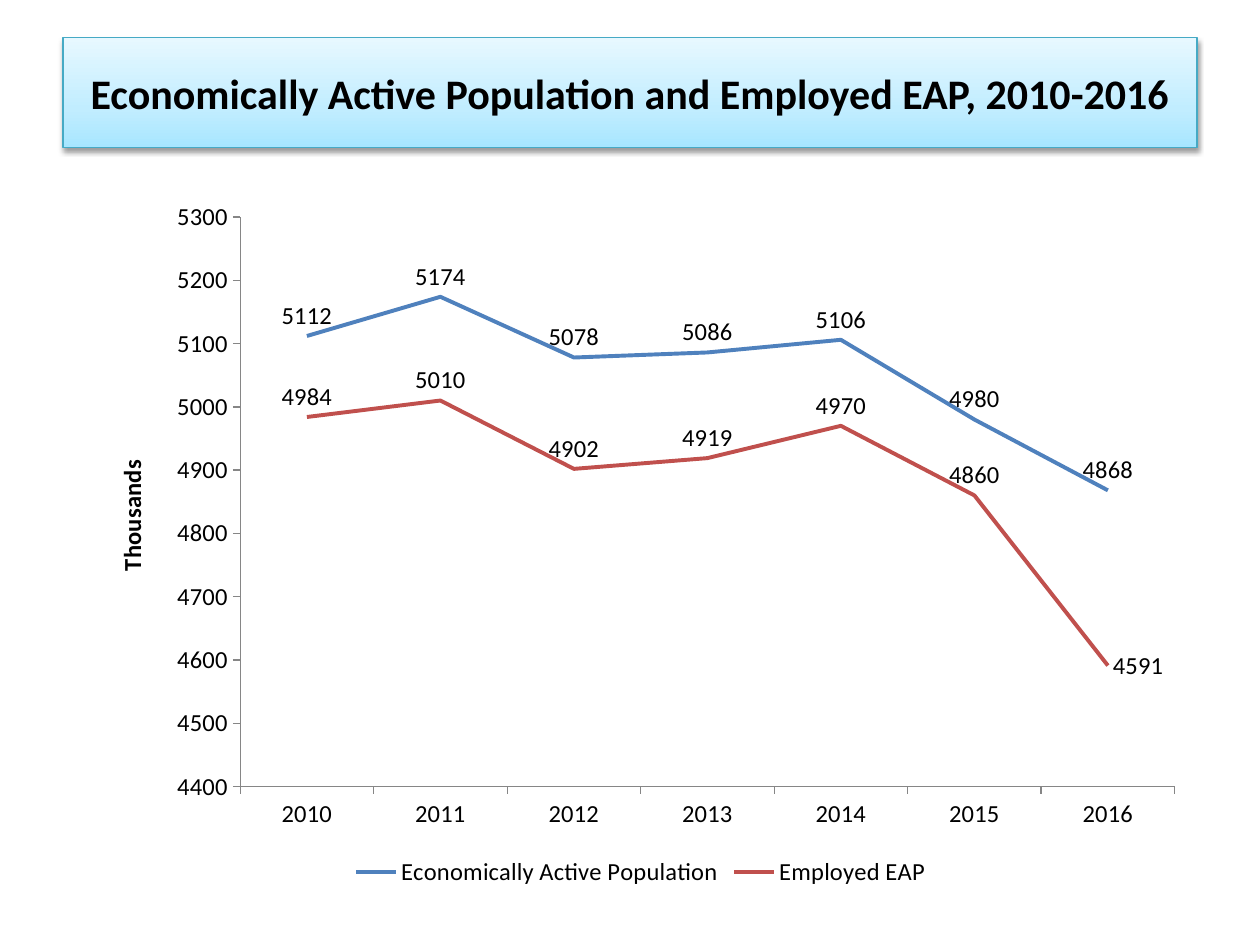
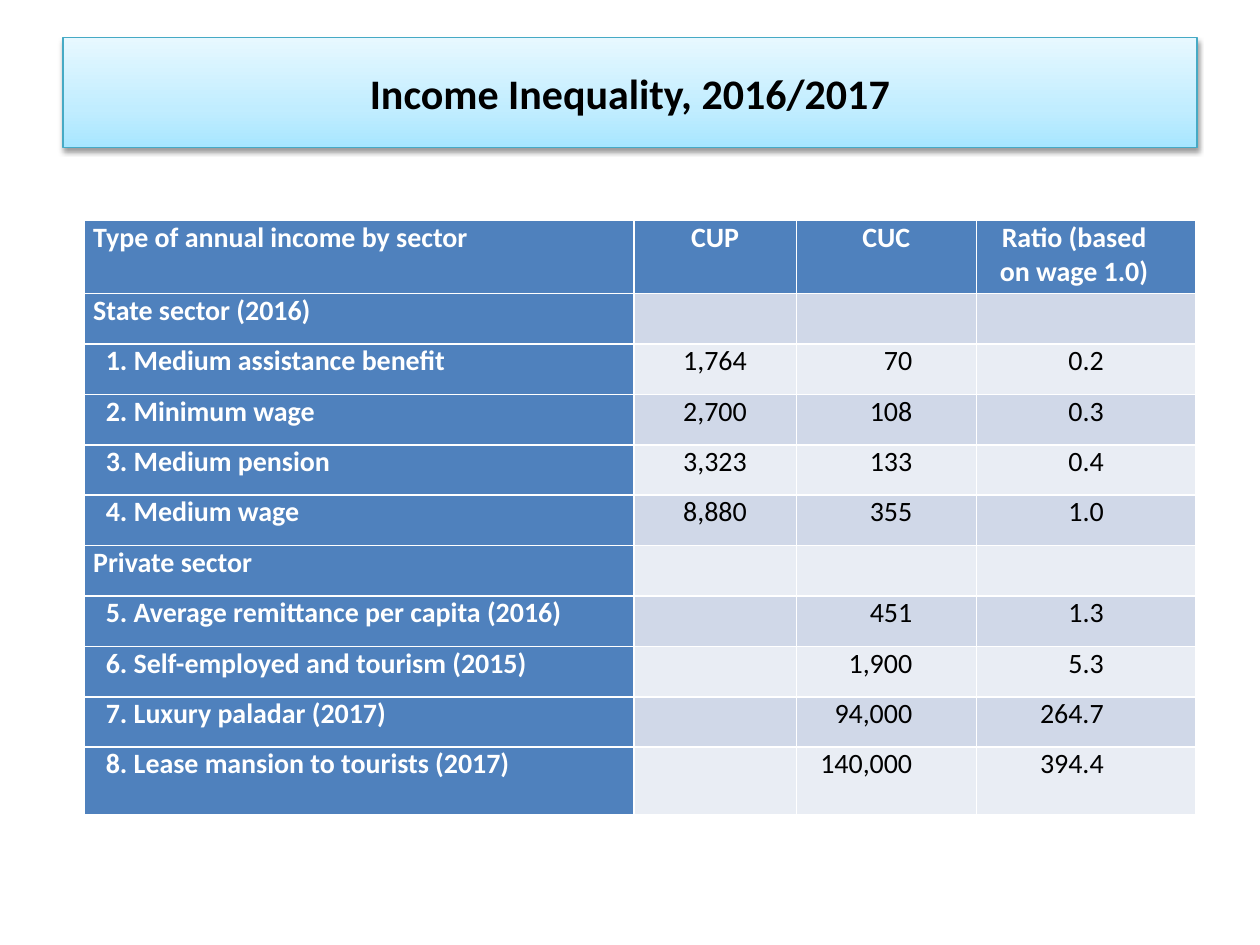
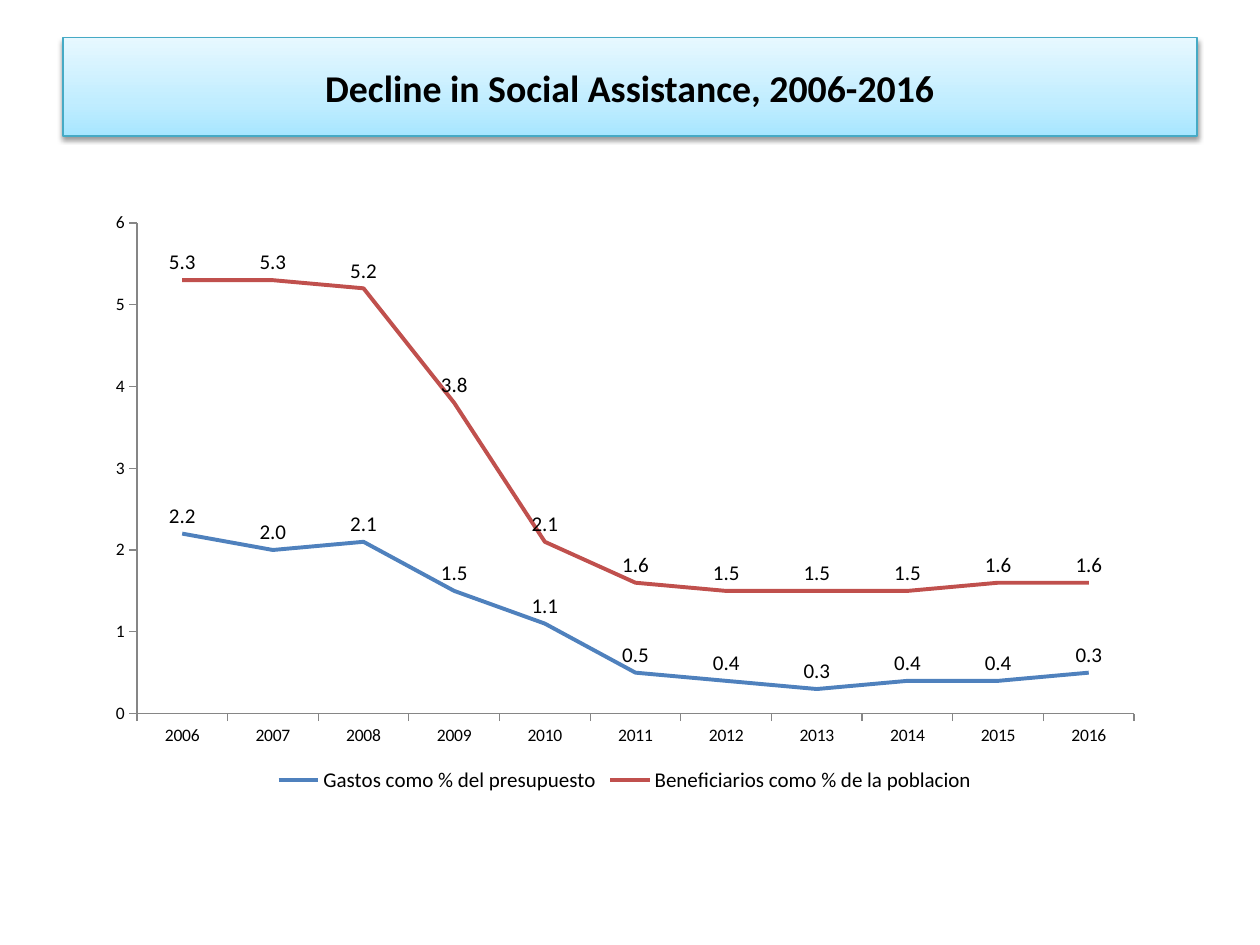
"""Build three slides on employment, income inequality and social assistance."""
from pptx import Presentation
from pptx.chart.data import CategoryChartData
from pptx.dml.color import RGBColor
from pptx.enum.chart import XL_CHART_TYPE, XL_LABEL_POSITION, XL_LEGEND_POSITION, XL_TICK_MARK
from pptx.enum.text import MSO_ANCHOR, MSO_AUTO_SIZE, PP_ALIGN
from pptx.oxml import parse_xml
from pptx.util import Inches, Pt

FONT = "Calibri"
COLORS = {
    "text": "000000",
    "white": "FFFFFF",
    "blue": "4F81BD",
    "red": "C0504D",
    "axis": "868686",
    "title_line": "46AAC5",
    "title_bottom": "A7E6FF",
    "title_middle": "C1EDFF",
    "title_top": "E7F8FF",
    "band_dark": "D0D8E8",
    "band_light": "E9EDF4",
}
DRAWING = 'xmlns:a="http://schemas.openxmlformats.org/drawingml/2006/main"'
CHART = 'xmlns:c="http://schemas.openxmlformats.org/drawingml/2006/chart"'
TITLE_FILL = f"""<a:gradFill {DRAWING} rotWithShape="1"><a:gsLst>
<a:gs pos="0"><a:srgbClr val="{COLORS['title_bottom']}"/></a:gs>
<a:gs pos="35000"><a:srgbClr val="{COLORS['title_middle']}"/></a:gs>
<a:gs pos="100000"><a:srgbClr val="{COLORS['title_top']}"/></a:gs>
</a:gsLst><a:lin ang="16200000" scaled="1"/></a:gradFill>"""
TITLE_SHADOW = f"""<a:effectLst {DRAWING}>
<a:outerShdw blurRad="40000" dist="20000" dir="5400000" rotWithShape="0">
<a:srgbClr val="{COLORS['text']}"><a:alpha val="38000"/></a:srgbClr>
</a:outerShdw></a:effectLst>"""


def style_font(font, size, color="text", bold=False):
    font.name = FONT
    font.size = Pt(size)
    font.bold = bold
    font.color.rgb = RGBColor.from_string(COLORS[color])


presentation = Presentation()
presentation.slide_width = Inches(10)
presentation.slide_height = Inches(7.5)

titles = [
    ("Economically Active Population and Employed EAP, 2010-2016", 0.87, 24),
    ("Income Inequality, 2016/2017", 0.87, 24),
    ("Decline in Social Assistance, 2006-2016", 0.78, 21.6),
]
slides = []
for text, height, size in titles:
    slide = presentation.slides.add_slide(presentation.slide_layouts[5])
    title = slide.shapes.title
    title.left, title.top = Inches(0.5), Inches(0.3)
    title.width, title.height = Inches(9), Inches(height)
    title.line.color.rgb = RGBColor.from_string(COLORS["title_line"])
    title.line.width = Pt(0.75)
    properties = title.element.spPr
    properties.insert(1, parse_xml(TITLE_FILL))
    properties.append(parse_xml(TITLE_SHADOW))
    frame = title.text_frame
    frame.text = text
    frame.word_wrap = True
    frame.auto_size = MSO_AUTO_SIZE.NONE
    frame.vertical_anchor = MSO_ANCHOR.MIDDLE
    frame.paragraphs[0].alignment = PP_ALIGN.CENTER
    style_font(frame.paragraphs[0].font, size, bold=True)
    slides.append(slide)
population_slide, income_slide, assistance_slide = slides

chart_specs = [
    {
        "slide": population_slide,
        "box": (0.67, 1.5, 8.83, 5.58),
        "plot": (0.14, 0.04, 0.84, 0.81),
        "years": range(2010, 2017),
        "series": {
            "Economically Active Population": (5112, 5174, 5078, 5086, 5106, 4980, 4868),
            "Employed EAP": (4984, 5010, 4902, 4919, 4970, 4860, 4591),
        },
        "scale": (4400, 5300, 100),
        "format": "0",
        "axis_size": 14,
        "label_size": 14,
    },
    {
        "slide": assistance_slide,
        "box": (0.75, 1.58, 8.42, 4.75),
        "plot": (0.04, 0.04, 0.94, 0.82),
        "years": range(2006, 2017),
        "series": {
            "Gastos como % del presupuesto": (2.2, 2, 2.1, 1.5, 1.1, 0.5, 0.4, 0.3, 0.4, 0.4, 0.5),
            "Beneficiarios como % de la poblacion": (5.3, 5.3, 5.2, 3.8, 2.1, 1.6, 1.5, 1.5, 1.5, 1.6, 1.6),
        },
        "scale": (0, 6, 1),
        "format": "0.0",
        "axis_size": 10,
        "label_size": 12,
    },
]
charts = []
for spec in chart_specs:
    data = CategoryChartData()
    data.categories = [str(year) for year in spec["years"]]
    for name, values in spec["series"].items():
        data.add_series(name, values)
    box = [Inches(length) for length in spec["box"]]
    chart = spec["slide"].shapes.add_chart(XL_CHART_TYPE.LINE, *box, data).chart
    chart.has_title = False
    style_font(chart.font, spec["axis_size"])
    chart.has_legend = True
    chart.legend.position = XL_LEGEND_POSITION.BOTTOM
    chart.legend.include_in_layout = False
    style_font(chart.legend.font, spec["label_size"])

    for axis in (chart.category_axis, chart.value_axis):
        axis.has_major_gridlines = False
        axis.major_tick_mark = XL_TICK_MARK.OUTSIDE
        axis.format.line.color.rgb = RGBColor.from_string(COLORS["axis"])
        axis.format.line.width = Pt(0.75)
    value_axis = chart.value_axis
    value_axis.minimum_scale, value_axis.maximum_scale, value_axis.major_unit = spec["scale"]
    value_axis.tick_labels.number_format = "0"
    value_axis.tick_labels.number_format_is_linked = False

    chart.plots[0].vary_by_categories = False
    for series, color in zip(chart.plots[0].series, ("blue", "red")):
        series.smooth = False
        series.format.line.color.rgb = RGBColor.from_string(COLORS[color])
        series.format.line.width = Pt(2.25)
        labels = series.data_labels
        labels.show_value = True
        labels.position = XL_LABEL_POSITION.ABOVE
        labels.number_format = spec["format"]
        labels.number_format_is_linked = False
        style_font(labels.font, spec["label_size"])

    plot_area = chart.element.chart.plotArea
    for layout in plot_area.xpath("c:layout"):
        plot_area.remove(layout)
    edges = "".join(f'<c:{edge} val="{share}"/>' for edge, share in zip("xywh", spec["plot"]))
    plot_area.insert(0, parse_xml(
        f'<c:layout {CHART}><c:manualLayout><c:layoutTarget val="inner"/>'
        f'<c:xMode val="edge"/><c:yMode val="edge"/>{edges}</c:manualLayout></c:layout>'
    ))
    charts.append(chart)
population_chart, assistance_chart = charts

axis_title = population_chart.value_axis.axis_title.text_frame
axis_title.text = "Thousands"
style_font(axis_title.paragraphs[0].font, 14, bold=True)
last_employed = population_chart.plots[0].series[1].points[6].data_label
last_employed.position = XL_LABEL_POSITION.RIGHT

last_spending = assistance_chart.plots[0].series[0].points[10].data_label
last_spending.text_frame.text = "0.3"
style_font(last_spending.text_frame.paragraphs[0].font, 12)
last_spending.position = XL_LABEL_POSITION.ABOVE

income_rows = [
    ("Type of annual income by sector", "CUP", "CUC", "Ratio (based\non wage 1.0)"),
    ("State sector (2016)", "", "", ""),
    ("1. Medium assistance benefit", "1,764", "70", "0.2"),
    ("2. Minimum wage", "2,700", "108", "0.3"),
    ("3. Medium pension", "3,323", "133", "0.4"),
    ("4. Medium wage", "8,880", "355", "1.0"),
    ("Private sector", "", "", ""),
    ("5. Average remittance per capita (2016)", "", "451", "1.3"),
    ("6. Self-employed and tourism (2015)", "", "1,900", "5.3"),
    ("7. Luxury paladar (2017)", "", "94,000", "264.7"),
    ("8. Lease mansion to tourists (2017)", "", "140,000", "394.4"),
]
column_widths = (4.36, 1.29, 1.43, 1.74)
row_heights = [0.58] + [0.4] * 9 + [0.54]
body_alignments = (PP_ALIGN.LEFT, PP_ALIGN.CENTER, PP_ALIGN.RIGHT, PP_ALIGN.RIGHT)
body_right_margins = (0.07, 0.07, 0.51, 0.73)
header_right_margins = (0.07, 0.07, 0.07, 0.26)

table = income_slide.shapes.add_table(
    len(income_rows), len(column_widths), Inches(0.67), Inches(1.75), Inches(8.83), Inches(4.71)
).table
table.first_col = True
for column, width in zip(table.columns, column_widths):
    column.width = Inches(width)
for row, height in zip(table.rows, row_heights):
    row.height = Inches(height)

for row_index, texts in enumerate(income_rows):
    is_header = row_index == 0
    band = "band_dark" if row_index % 2 else "band_light"
    right_margins = header_right_margins if is_header else body_right_margins
    for column_index, text in enumerate(texts):
        cell = table.cell(row_index, column_index)
        is_heading = is_header or column_index == 0
        is_item = column_index == 0 and text[0].isdigit()
        cell.fill.solid()
        cell.fill.fore_color.rgb = RGBColor.from_string(COLORS["blue" if is_heading else band])
        cell.margin_left = Inches(0.17 if is_item else 0.07)
        cell.margin_right = Inches(right_margins[column_index])
        cell.margin_top = cell.margin_bottom = 0
        cell.text = text
        for paragraph in cell.text_frame.paragraphs:
            paragraph.alignment = body_alignments[column_index]
            if is_header and column_index:
                paragraph.alignment = PP_ALIGN.CENTER
            style_font(paragraph.font, 16, "white" if is_heading else "text", is_heading)

presentation.save("out.pptx")
